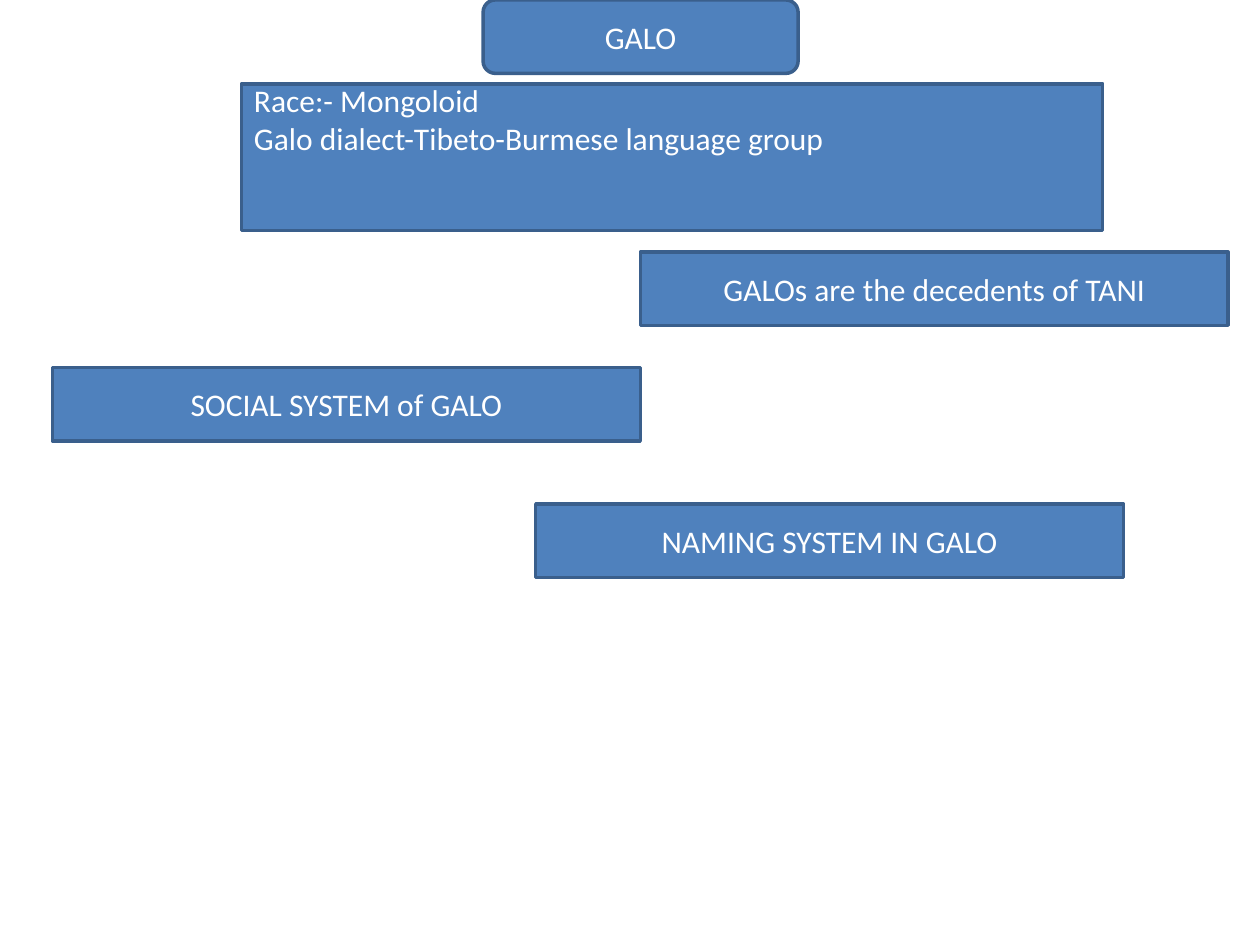
from pptx import Presentation
from pptx.dml.color import RGBColor
from pptx.enum.shapes import MSO_SHAPE
from pptx.enum.text import MSO_ANCHOR, PP_ALIGN
from pptx.util import Cm, Pt

RECTANGLE = MSO_SHAPE.RECTANGLE
ROUNDED = MSO_SHAPE.ROUNDED_RECTANGLE
MIDDLE = MSO_ANCHOR.MIDDLE
LEFT = PP_ALIGN.LEFT
CENTER = PP_ALIGN.CENTER

BLANK_LAYOUT = 6
BAR_WIDTH = 11.85
BAR_HEIGHT = 1.48


def color(value):
    return RGBColor.from_string(value)


def write_text(paragraph, text, *, font, size, text_color, align):
    paragraph.alignment = align
    run = paragraph.add_run()
    run.text = text
    run.font.name = font
    run.font.size = Pt(size)
    run.font.color.rgb = color(text_color)


class SlideBuilder:
    font = "Calibri"
    size = 18
    text_color = "FFFFFF"
    fill = "4F81BD"
    border = "3A5F8C"
    border_width = 2

    def __init__(self, slide):
        self.slide = slide

    def box(self, lines, left, top, width=BAR_WIDTH, height=BAR_HEIGHT,
            kind=RECTANGLE, align=CENTER, margin_top=0.13, margin_bottom=0.13):
        shape = self.slide.shapes.add_shape(
            kind, Cm(left), Cm(top), Cm(width), Cm(height))
        shape.shadow.inherit = False
        shape.fill.solid()
        shape.fill.fore_color.rgb = color(self.fill)
        shape.line.color.rgb = color(self.border)
        shape.line.width = Pt(self.border_width)
        frame = shape.text_frame
        frame.word_wrap = True
        frame.vertical_anchor = MIDDLE
        frame.margin_top = Cm(margin_top)
        frame.margin_bottom = Cm(margin_bottom)
        for index, line in enumerate(lines):
            paragraph = frame.add_paragraph() if index else frame.paragraphs[0]
            write_text(paragraph, line, font=self.font, size=self.size,
                       text_color=self.text_color, align=align)


def main():
    presentation = Presentation()
    presentation.slide_width = Cm(25.4)
    presentation.slide_height = Cm(19.05)
    slide = presentation.slides.add_slide(presentation.slide_layouts[BLANK_LAYOUT])
    builder = SlideBuilder(slide)

    builder.box(["GALO"], 9.74, 0, width=6.35, kind=ROUNDED)
    builder.box(
        ["Race:- Mongoloid", "Galo dialect-Tibeto-Burmese language group"],
        4.87, 1.69, width=17.36, height=2.96, align=LEFT,
        margin_top=0, margin_bottom=1.54)

    bars = [
        ("GALOs are the decedents of TANI", 12.91, 5.08),
        ("SOCIAL SYSTEM of GALO", 1.06, 7.41),
        ("NAMING SYSTEM IN GALO", 10.8, 10.16),
    ]
    for text, left, top in bars:
        builder.box([text], left, top)

    presentation.save("out.pptx")


if __name__ == "__main__":
    main()
